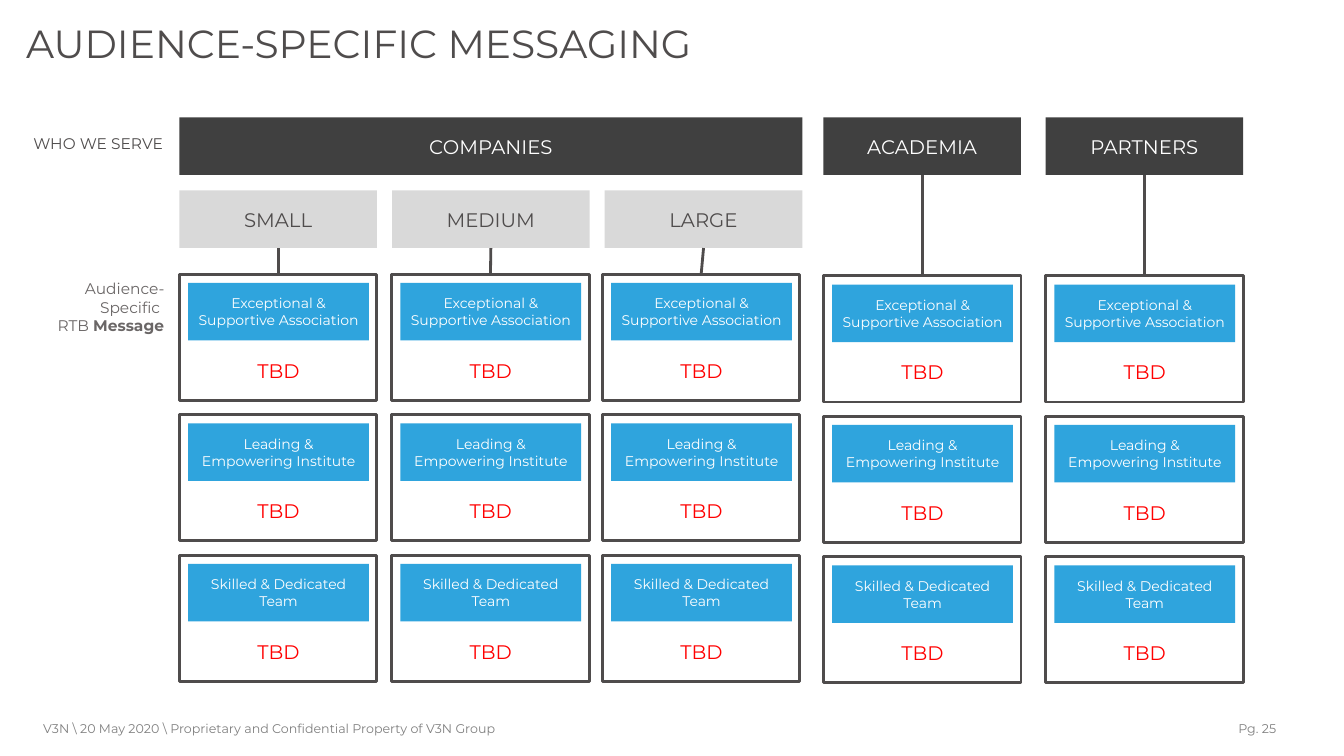
from pptx import Presentation
from pptx.dml.color import RGBColor
from pptx.enum import shapes, text
from pptx.oxml.ns import qn
from pptx.util import Cm, Pt
from lxml import etree

# Content
TITLE = "AUDIENCE-SPECIFIC MESSAGING"
ROW_LABELS = [  # left, top, width, height, colour, paragraphs of (run, bold)
    (-0.64, 3.25, 5, 0.84, "4F4C4C", [[("WHO WE SERVE", False)]]),
    (0.61, 6.91, 3.78, 0.94, "6A6666",
     [[("Audience-Specific ", False)], [("RTB ", False), ("Message", True)]]),
]
SIZES = ["SMALL", "MEDIUM", "LARGE"]
OTHERS = ["ACADEMIA", "PARTNERS"]
MESSAGES = ["Exceptional & Supportive Association",
            "Leading & Empowering Institute",
            "Skilled & Dedicated Team"]
PENDING = "TBD"
FOOTER = "V3N \\ 20 May 2020 \\ Proprietary and Confidential Property of V3N Group"
PAGE = "Pg. 25"

# Layout in cm
COL_W, BAR_H, CARD_H = 4.98, 1.45, 3.18
SIZE_X, SIZE_STEP, SIZE_Y = 4.52, 5.36, 4.8
HEAD_Y = 2.96
OTHER_X = [20.75, 26.35]
CARD_X = [4.52, 9.87, 15.18] + OTHER_X
CARD_Y, CARD_STEP, OTHER_DROP = 6.91, 3.54, 0.04
PAD, INNER_W, PENDING_DY, PENDING_H = 0.22, 4.56, 1.77, 1.3
DARK, INK, LIGHT, BLUE = "404040", "4F4C4C", "D9D9D9", "2FA4DD"
WHITE, RED, GREY = "FFFFFF", "FF0000", "808080"
LEFT, CENTER, RIGHT = text.PP_ALIGN.LEFT, text.PP_ALIGN.CENTER, text.PP_ALIGN.RIGHT
TOP, MIDDLE = text.MSO_ANCHOR.TOP, text.MSO_ANCHOR.MIDDLE

prs = Presentation()
prs.slide_width, prs.slide_height = Cm(33.87), Cm(19.05)
s = prs.slides.add_slide(prs.slide_layouts[6])


def rgb(value):
    return RGBColor.from_string(value)


def write(sp, paragraphs, size, color, align=CENTER, anchor=MIDDLE, wrap=True):
    tf = sp.text_frame
    tf.word_wrap, tf.vertical_anchor = wrap, anchor
    for i, runs in enumerate(paragraphs):
        p = tf.add_paragraph() if i else tf.paragraphs[0]
        p.alignment = align
        p.font.name, p.font.size, p.font.color.rgb = "Montserrat", Pt(size), rgb(color)
        for content, bold in runs:
            r = p.add_run()
            r.text = content
            if bold:
                r.font.bold = True
    return tf


def box(x, y, w, h, fill=None):
    sp = s.shapes.add_shape(shapes.MSO_SHAPE.RECTANGLE, Cm(x), Cm(y), Cm(w), Cm(h))
    sp.shadow.inherit = False
    if fill:
        sp.fill.solid()
        sp.fill.fore_color.rgb = rgb(fill)
        sp.line.fill.background()
    else:
        sp.fill.background()
        sp.line.color.rgb, sp.line.width = rgb(INK), Pt(2)
    return sp


def bar(x, y, w, label, fill, size, color):
    write(box(x, y, w, BAR_H, fill), [[(label, False)]], size, color)


def label(x, y, w, h, paragraphs, size, color, **style):
    sp = s.shapes.add_textbox(Cm(x), Cm(y), Cm(w), Cm(h))
    return write(sp, paragraphs, size, color, **style)


def connect(x1, y1, x2, y2):
    line = s.shapes.add_connector(shapes.MSO_CONNECTOR.STRAIGHT,
                                  Cm(x1), Cm(y1), Cm(x2), Cm(y2))
    line.line.color.rgb, line.line.width = rgb(INK), Pt(2)
    etree.SubElement(line._element.spPr, qn("a:effectLst"))


# Footer
tf = label(23.85, 18.03, 8.31, 0.64, [[(PAGE, False)]], 9, GREY, align=RIGHT, anchor=TOP)
tf.margin_left = tf.margin_right = 0
tf = label(1.09, 18.03, 15.19, 0.64, [[(FOOTER, False)]], 9, GREY, align=LEFT, wrap=False)
tf.margin_left = 0

# Title and row labels
label(0.41, 0.36, 23.7, 3, [[(TITLE, False)]], 28, INK, align=LEFT, anchor=TOP)
for x, y, w, h, color, paragraphs in ROW_LABELS:
    label(x, y, w, h, paragraphs, 11, color, align=RIGHT, anchor=TOP)

# Audience headers
bar(SIZE_X, HEAD_Y, 2 * SIZE_STEP + COL_W, "COMPANIES", DARK, 14, WHITE)
heads = []  # left edge and bottom of the header above each column
for i, name in enumerate(SIZES):
    x = SIZE_X + i * SIZE_STEP
    bar(x, SIZE_Y, COL_W, name, LIGHT, 14, INK)
    heads.append((x, SIZE_Y + BAR_H))
for x, name in zip(OTHER_X, OTHERS):
    bar(x, HEAD_Y, COL_W, name, DARK, 14, WHITE)
    heads.append((x, HEAD_Y + BAR_H))

# Message cards and the lines down to them
for col, (x, (head_x, head_bottom)) in enumerate(zip(CARD_X, heads)):
    top = CARD_Y + (OTHER_DROP if col >= len(SIZES) else 0)
    for row, message in enumerate(MESSAGES):
        y = top + row * CARD_STEP
        box(x, y, COL_W, CARD_H)
        label(x + PAD, y + PENDING_DY, INNER_W, PENDING_H, [[(PENDING, False)]], 14, RED)
        bar(x + PAD, y + PAD, INNER_W, message, BLUE, 10, WHITE)
    connect(head_x + COL_W / 2, head_bottom, x + COL_W / 2, top)

prs.save("out.pptx")
